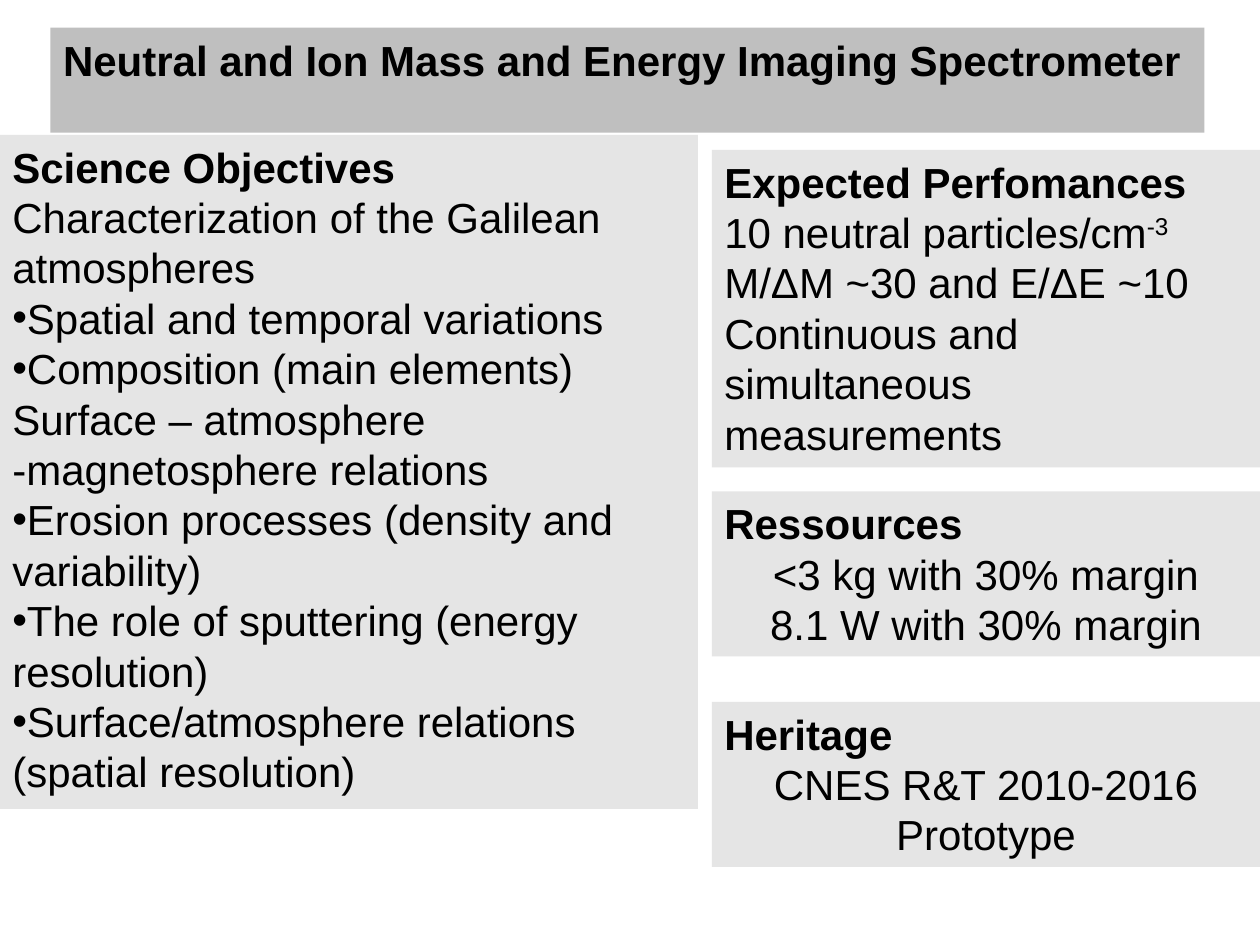
import dataclasses

import lxml.etree
import pptx
import pptx.dml.color
import pptx.enum.text
import pptx.oxml.ns
import pptx.util

Inches = pptx.util.Inches
ALIGN = pptx.enum.text.PP_ALIGN


@dataclasses.dataclass(frozen=True)
class Theme:
    font: str = "Arial"
    size: int = 24
    ink: str = "000000"
    title_fill: str = "BFBFBF"
    panel_fill: str = "D9D9D9"
    panel_opacity: int = 66


THEME = Theme()


def add_xml(parent, tag, **attributes):
    return lxml.etree.SubElement(parent, pptx.oxml.ns.qn(tag), attributes)


def write_text(paragraph, text, bold=False, superscript=False, bullet=False, align=ALIGN.LEFT):
    paragraph.alignment = align
    if bullet:
        properties = paragraph._p.get_or_add_pPr()
        add_xml(properties, "a:buFont", typeface=THEME.font)
        add_xml(properties, "a:buChar", char="•")
    run = paragraph.add_run()
    run.text = text
    run.font.name = THEME.font
    run.font.size = pptx.util.Pt(THEME.size)
    run.font.bold = bold
    run.font.color.rgb = pptx.dml.color.RGBColor.from_string(THEME.ink)
    if superscript:
        run._r.get_or_add_rPr().set("baseline", "30000")


def fill_box(shape, color, opacity=100):
    shape.fill.solid()
    shape.fill.fore_color.rgb = pptx.dml.color.RGBColor.from_string(color)
    if opacity < 100:
        rgb = shape._element.spPr.find(".//" + pptx.oxml.ns.qn("a:srgbClr"))
        add_xml(rgb, "a:alpha", val=str(opacity * 1000))


def fit_frame(frame, wrap):
    frame.word_wrap = wrap
    frame.auto_size = pptx.enum.text.MSO_AUTO_SIZE.SHAPE_TO_FIT_TEXT
    frame.vertical_anchor = pptx.enum.text.MSO_ANCHOR.TOP


def place_title(slide, box, text):
    title = slide.shapes.title
    title.left, title.top, title.width, title.height = map(Inches, box)
    fill_box(title, THEME.title_fill)
    fit_frame(title.text_frame, wrap=False)
    write_text(title.text_frame.paragraphs[0], text, bold=True)


def add_panel(slide, box, heading, lines):
    """Each line is a list of (text, format) pieces."""
    panel = slide.shapes.add_textbox(*map(Inches, box))
    fill_box(panel, THEME.panel_fill, THEME.panel_opacity)
    frame = panel.text_frame
    fit_frame(frame, wrap=True)
    write_text(frame.paragraphs[0], heading, bold=True)
    for pieces in lines:
        paragraph = frame.add_paragraph()
        for text, style in pieces:
            write_text(paragraph, text, **style)


def plain(text):
    return [(text, {})]


def bullet(text):
    return [(text, {"bullet": True})]


def centered(text):
    return [(text, {"align": ALIGN.CENTER})]


OBJECTIVES = [
    plain("Characterization of the Galilean atmospheres"),
    bullet("Spatial and temporal variations"),
    bullet("Composition (main elements)"),
    plain("Surface – atmosphere -magnetosphere relations"),
    bullet("Erosion processes (density and variability)"),
    bullet("The role of sputtering (energy resolution)"),
    bullet("Surface/atmosphere relations (spatial resolution)"),
]

# Right column: top, height, heading, lines
RIGHT_PANELS = [
    (1.19, 2.52, "Expected Perfomances", [
        [("10 neutral particles/cm", {}), ("-3", {"superscript": True})],
        plain("M/ΔM ~30 and E/ΔE ~10"),
        plain("Continuous and simultaneous measurements"),
    ]),
    (3.9, 1.31, "Ressources", [
        centered("<3 kg with 30% margin"),
        centered("8.1 W with 30% margin"),
    ]),
    (5.57, 1.31, "Heritage", [
        centered("CNES R&T 2010-2016"),
        centered("Prototype"),
    ]),
]


def add_right_column(slide, left, width):
    for top, height, heading, lines in RIGHT_PANELS:
        add_panel(slide, (left, top, width, height), heading, lines)


def main():
    deck = pptx.Presentation()
    deck.slide_width, deck.slide_height = Inches(10), Inches(7.5)
    slide = deck.slides.add_slide(deck.slide_layouts.get_by_name("Title Only"))

    place_title(slide, (0.4, 0.22, 9.16, 0.51),
                "Neutral and Ion Mass and Energy Imaging Spectrometer")
    add_panel(slide, (0, 1.07, 5.54, 5.35), "Science Objectives", OBJECTIVES)
    add_right_column(slide, left=5.65, width=4.35)

    deck.save("out.pptx")


if __name__ == "__main__":
    main()
